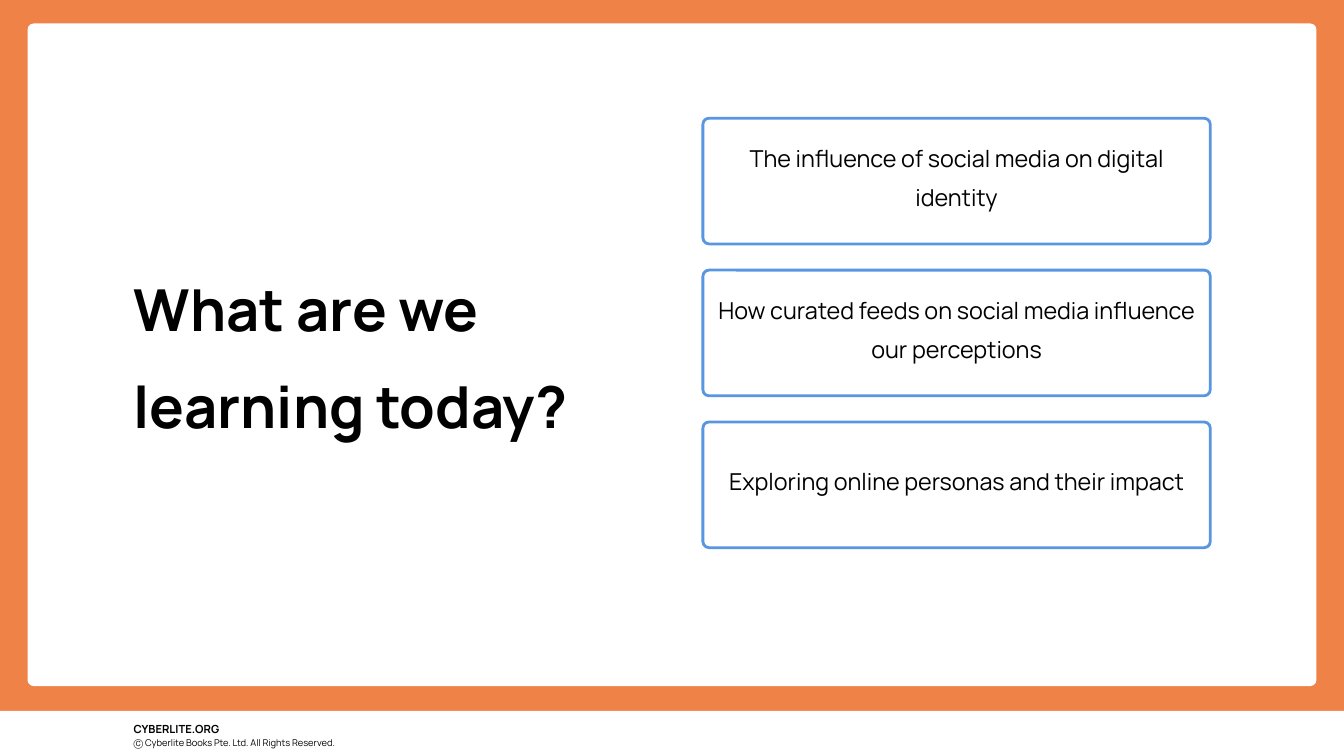
from pptx import Presentation
from pptx import util as u
from pptx.dml import color
from pptx.enum import shapes, text


def rgb(value):
    return color.RGBColor.from_string(value)


class Deck:
    font = "Manrope"
    ink = "000000"
    paper = "FFFFFF"
    frame = "EF8247"
    accent = "5996E2"
    spacing = 1.4
    radius = 0.09

    def __init__(self, slide):
        self.s = slide
        fill = slide.background.fill
        fill.solid()
        fill.fore_color.rgb = rgb(self.frame)

    def set_text(self, sp, words, size, bold=False, align=text.PP_ALIGN.LEFT,
                 anchor=text.MSO_ANCHOR.TOP, insets=(0, 0, 0, 0)):
        tf = sp.text_frame
        tf.text = words
        tf.word_wrap = True
        tf.auto_size = text.MSO_AUTO_SIZE.NONE
        tf.vertical_anchor = anchor
        tf.margin_left, tf.margin_top, tf.margin_right, tf.margin_bottom = map(u.Inches, insets)
        p = tf.paragraphs[0]
        p.alignment = align
        p.line_spacing = self.spacing
        for r in p.runs:
            r.font.name = self.font
            r.font.size = u.Pt(size)
            r.font.bold = bold
            r.font.color.rgb = rgb(self.ink)

    def panel(self, x, y, w, h, rounded=True):
        kind = shapes.MSO_SHAPE.ROUNDED_RECTANGLE if rounded else shapes.MSO_SHAPE.RECTANGLE
        sp = self.s.shapes.add_shape(kind, *map(u.Inches, (x, y, w, h)))
        if rounded:
            sp.adjustments[0] = self.radius / min(w, h)
        sp.shadow.inherit = False
        sp.fill.solid()
        sp.fill.fore_color.rgb = rgb(self.paper)
        sp.line.fill.background()
        return sp

    def card(self, words, x, y, w, h):
        sp = self.panel(x, y, w, h)
        sp.line.color.rgb = rgb(self.accent)
        sp.line.width = u.Pt(3)
        self.set_text(sp, words, 25, align=text.PP_ALIGN.CENTER,
                      anchor=text.MSO_ANCHOR.MIDDLE, insets=(0.06, 0.06, 0.06, 0.33))

    def label(self, words, x, y, w, h, size, bold=False):
        sp = self.s.shapes.add_textbox(*map(u.Inches, (x, y, w, h)))
        self.set_text(sp, words, size, bold)

    def title(self, words, x, y, w, h):
        sp = self.s.shapes.title
        sp.left, sp.top, sp.width, sp.height = map(u.Inches, (x, y, w, h))
        self.set_text(sp, words, 62, bold=True)
        self.s.shapes._spTree.append(sp._element)


def main():
    prs = Presentation()
    prs.slide_width, prs.slide_height = u.Inches(20), u.Inches(11.25)
    deck = Deck(prs.slides.add_slide(prs.slide_layouts[5]))

    margin = 1.99
    deck.panel(0, 10.58, 20, 0.67, rounded=False)
    deck.label("CYBERLITE.ORG", margin, 10.67, 1.43, 0.2, 12, bold=True)
    deck.label("Ⓒ Cyberlite Books Pte. Ltd. All Rights Reserved.",
               margin, 10.9, 4.63, 0.17, 10)
    deck.panel(0.41, 0.35, 19.18, 9.86)

    topics = [
        "The influence of social media on digital identity",
        "How curated feeds on social media influence our perceptions",
        "Exploring online personas and their impact",
    ]
    card_top, card_height, card_gap = 1.76, 1.87, 0.39
    for i, topic in enumerate(topics):
        deck.card(topic, 10.46, card_top + i * (card_height + card_gap), 7.55, card_height)

    deck.title("What are we learning today?", margin, 3.66, 7.22, 2.41)
    prs.save("out.pptx")


if __name__ == "__main__":
    main()
